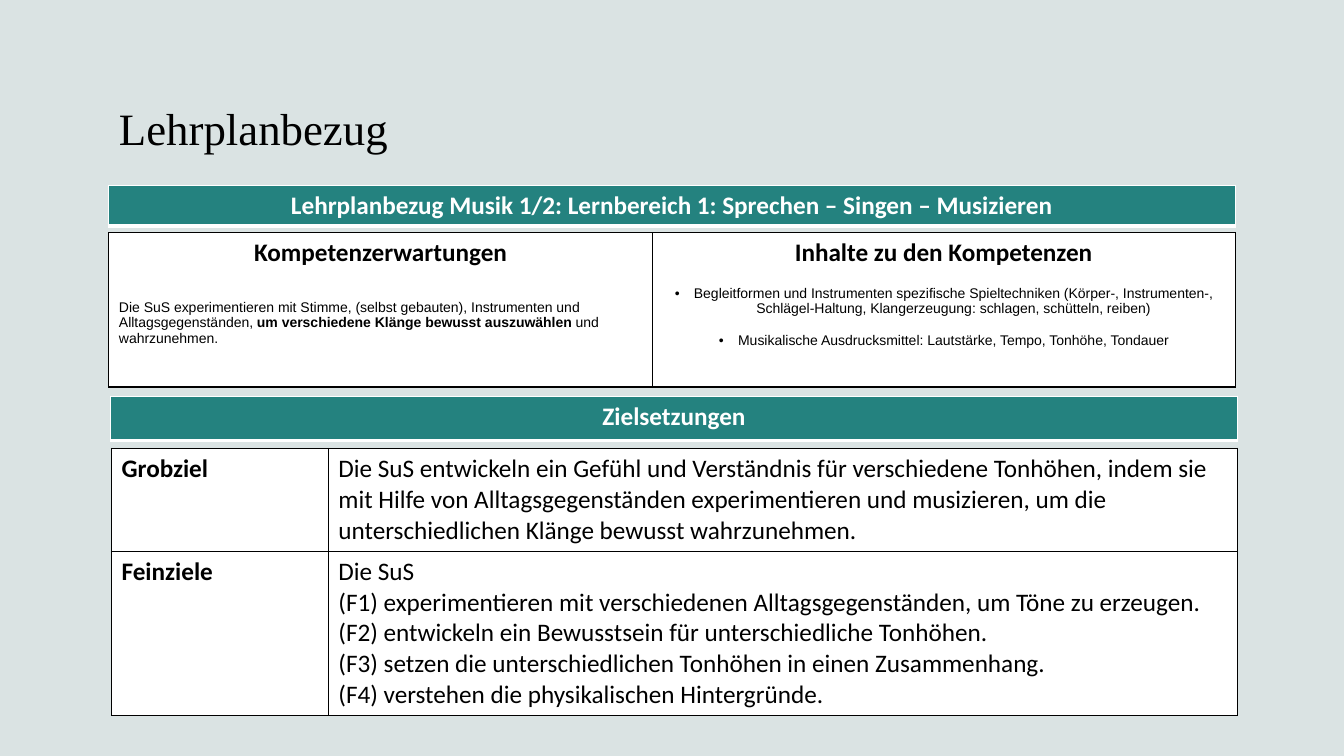
"""Build a slide on curriculum links and lesson goals."""
from dataclasses import dataclass

from lxml import etree
from pptx import Presentation
from pptx.dml.color import RGBColor
from pptx.enum.text import MSO_ANCHOR, MSO_AUTO_SIZE, PP_ALIGN
from pptx.oxml.ns import qn
from pptx.util import Inches, Pt

LEFT, CENTER = PP_ALIGN.LEFT, PP_ALIGN.CENTER
BOTTOM, FIXED = MSO_ANCHOR.BOTTOM, MSO_AUTO_SIZE.NONE
WIDTH, HEIGHT = Inches(13.33), Inches(7.5)
TITLE_ONLY = 5


@dataclass(frozen=True)
class Theme:
    """Hold colours, fonts and type sizes."""
    back: str = "DAE3E3"
    teal: str = "24827F"
    white: str = "FFFFFF"
    black: str = "000000"
    serif: str = "Times New Roman"
    sans: str = "Calibri"
    small: str = "Arial"
    title: int = 32
    body: int = 18
    note: int = 10


THEME = Theme()


@dataclass(frozen=True)
class Para:
    """Hold one paragraph as (text, bold) runs with its format."""
    runs: tuple
    align: PP_ALIGN = LEFT
    face: str = THEME.sans
    size: int = THEME.body
    color: str = THEME.black
    before: float = 0
    bullet: bool = False


def wide(share):
    """Turn a percentage of the slide width into a length."""
    return round(WIDTH * share / 100)


def high(share):
    """Turn a percentage of the slide height into a length."""
    return round(HEIGHT * share / 100)


def plain(text):
    """Make a body paragraph."""
    return Para(((text, False),))


def bold(text, align=LEFT, color=THEME.black):
    """Make a bold body paragraph."""
    return Para(((text, True),), align, color=color)


def point(text, before):
    """Make a small centred bullet paragraph."""
    return Para(((text, False),), CENTER, THEME.small, THEME.note,
                before=before, bullet=True)


def style(font, face, size, color):
    """Set face, size and colour of a font."""
    font.name, font.size = face, Pt(size)
    font.color.rgb = RGBColor.from_string(color)


def add_dot(para):
    """Give a paragraph a hanging bullet."""
    props = para._p.get_or_add_pPr()
    props.set("marL", str(Inches(0.19)))
    props.set("indent", str(-Inches(0.19)))
    etree.SubElement(props, qn("a:buFont"), typeface=THEME.small)
    etree.SubElement(props, qn("a:buChar"), char="•")


def write(frame, paras):
    """Write paragraphs into a text frame."""
    for num, item in enumerate(paras):
        para = frame.add_paragraph() if num else frame.paragraphs[0]
        para.alignment = item.align
        para.space_before = Pt(item.before)
        if item.bullet:
            add_dot(para)
        style(para.font, item.face, item.size, item.color)
        same = len({strong for _, strong in item.runs}) == 1
        if same:
            para.font.bold = item.runs[0][1]
        for text, strong in item.runs:
            run = para.add_run()
            run.text = text
            if not same:
                run.font.bold = strong


def add_edges(cell, color, base):
    """Draw the four borders of a cell, the lower one of its own width."""
    props = cell._tc.get_or_add_tcPr()
    for side, width in zip("LRTB", (1, 1, 1, base)):
        line = etree.SubElement(props, qn(f"a:ln{side}"), w=str(Pt(width)))
        fill = etree.SubElement(line, qn("a:solidFill"))
        etree.SubElement(fill, qn("a:srgbClr"), val=color)


def add_grid(slide, left, top, cols, rows, cells, fill, edge, base=1):
    """Add a table whose sizes are shares of the slide."""
    table = slide.shapes.add_table(
        len(rows), len(cols), wide(left), high(top),
        wide(sum(cols)), high(sum(rows))).table
    table.first_row = table.horz_banding = False
    for col, share in zip(table.columns, cols):
        col.width = wide(share)
    for row, share in zip(table.rows, rows):
        row.height = high(share)
    for cell, paras in zip(table.iter_cells(), cells):
        add_edges(cell, edge, base)
        cell.fill.solid()
        cell.fill.fore_color.rgb = RGBColor.from_string(fill)
        write(cell.text_frame, paras)


def add_band(slide, left, top, height, text):
    """Add a teal heading band."""
    head = bold(text, CENTER, THEME.white)
    add_grid(slide, left, top, [83.8], [height], [[head]],
             THEME.teal, THEME.white, 3)


def add_title(slide, text):
    """Place and format the slide title."""
    title = slide.shapes.title
    title.left, title.top = wide(8.1), high(11.87)
    title.width, title.height = wide(23.18), high(9.2)
    frame = title.text_frame
    frame.auto_size, frame.vertical_anchor = FIXED, BOTTOM
    frame.word_wrap = True
    write(frame, [Para(((text, False),), face=THEME.serif, size=THEME.title)])


def main():
    """Build and save the slide."""
    deck = Presentation()
    deck.slide_width, deck.slide_height = WIDTH, HEIGHT
    slide = deck.slides.add_slide(deck.slide_layouts[TITLE_ONLY])
    slide.background.fill.solid()
    slide.background.fill.fore_color.rgb = RGBColor.from_string(THEME.back)
    add_title(slide, "Lehrplanbezug")

    add_band(slide, 8.1, 24.53, 5.4,
             "Lehrplanbezug Musik 1/2: Lernbereich 1: Sprechen – Singen – Musizieren")
    skills = [
        bold("Kompetenzerwartungen", CENTER),
        Para((("Die SuS experimentieren mit Stimme, (selbst gebauten), "
               "Instrumenten und Alltagsgegenständen, ", False),
              ("um verschiedene Klänge bewusst auszuwählen ", True),
              ("und wahrzunehmen.", False)),
             face=THEME.small, size=THEME.note, before=22),
    ]
    topics = [
        bold("Inhalte zu den Kompetenzen", CENTER),
        point("Begleitformen und Instrumenten spezifische Spieltechniken "
              "(Körper-, Instrumenten-, Schlägel-Haltung, Klangerzeugung: "
              "schlagen, schütteln, reiben)", 12),
        point("Musikalische Ausdrucksmittel: Lautstärke, Tempo, Tonhöhe, "
              "Tondauer", 11.5),
    ]
    add_grid(slide, 8.1, 30.8, [40.43, 43.37], [20.4], [skills, topics],
             THEME.white, THEME.black)

    add_band(slide, 8.25, 52.4, 5.87, "Zielsetzungen")
    broad = ("Die SuS entwickeln ein Gefühl und Verständnis für verschiedene "
             "Tonhöhen, indem sie mit Hilfe von Alltagsgegenständen "
             "experimentieren und musizieren, um die unterschiedlichen Klänge "
             "bewusst wahrzunehmen.")
    fine = [
        "Die SuS",
        "(F1) experimentieren mit verschiedenen Alltagsgegenständen, um Töne zu erzeugen.",
        "(F2) entwickeln ein Bewusstsein für unterschiedliche Tonhöhen.",
        "(F3) setzen die unterschiedlichen Tonhöhen in einen Zusammenhang.",
        "(F4) verstehen die physikalischen Hintergründe.",
    ]
    add_grid(slide, 8.3, 59.33, [16.13, 67.67], [13.6, 21.6],
             [[bold("Grobziel")], [plain(broad)],
              [bold("Feinziele")], [plain(text) for text in fine]],
             THEME.white, THEME.black)
    deck.save("out.pptx")


if __name__ == "__main__":
    main()
